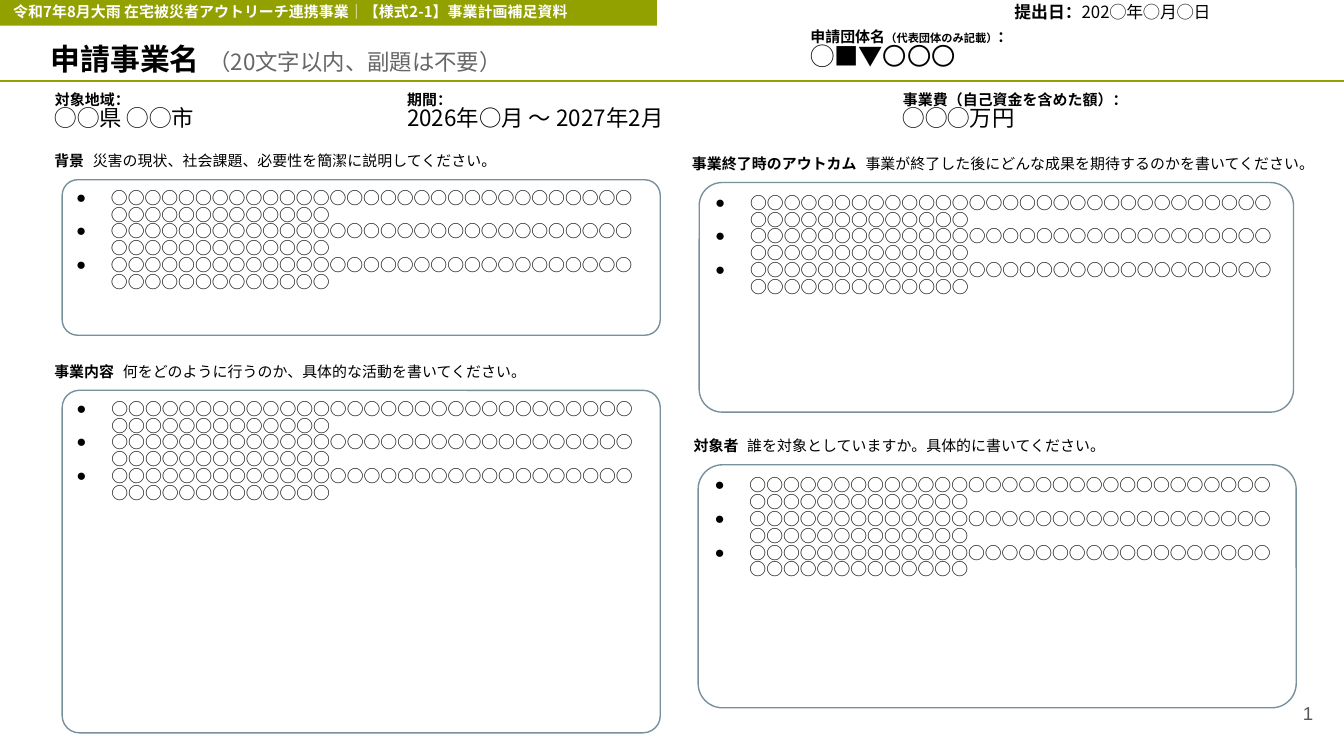
"""Build the one-page project plan form slide."""
from dataclasses import dataclass
from typing import NamedTuple

from lxml import etree
from pptx import Presentation
from pptx.dml.color import RGBColor
from pptx.enum.shapes import MSO_CONNECTOR, MSO_SHAPE
from pptx.enum.text import MSO_ANCHOR, PP_ALIGN
from pptx.oxml.ns import qn
from pptx.util import Pt

RECT, ROUND = MSO_SHAPE.RECTANGLE, MSO_SHAPE.ROUNDED_RECTANGLE
STRAIGHT = MSO_CONNECTOR.STRAIGHT
MIDDLE, TOP = MSO_ANCHOR.MIDDLE, MSO_ANCHOR.TOP
LEFT, RIGHT = PP_ALIGN.LEFT, PP_ALIGN.RIGHT


@dataclass(frozen=True)
class Theme:
    """Colours, fonts, type sizes and line spacings."""
    green: str = "92A000"
    outline: str = "78909C"
    black: str = "000000"
    white: str = "FFFFFF"
    hint: str = "666666"
    number: str = "595959"
    font: str = "Noto Sans CJK JP"
    number_font: str = "Arial"
    note: float = 6
    label: float = 8
    body: float = 9
    page: float = 10
    value: float = 12
    group: float = 13
    title: float = 16
    title_gap: float = 20
    tight: float = 0.83
    single: float = 0.92


T = Theme()


class Box(NamedTuple):
    """Position and size in points."""
    x: float
    y: float
    w: float
    h: float


class Span(NamedTuple):
    """A stretch of text in one style."""
    text: str
    size: float
    bold: bool = False
    color: str = T.black
    font: str = T.font


class Field(NamedTuple):
    """A bold label above its value."""
    box: Box
    label: list[Span]
    value: Span


class Section(NamedTuple):
    """A heading with guidance and the bulleted panel below it."""
    heading: Box
    name: str
    guide: str
    panel: Box
    radius: float


ITEMS = ["○" * 44] * 3
FIELDS = [
    Field(Box(427, 12.2, 264, 29.5),
          [Span("申請団体名", T.label, True), Span("（代表団体のみ記載）", T.note, True),
           Span("：", T.label, True)], Span("◯■▼〇〇〇", T.group)),
    Field(Box(22.3, 45.4, 178, 29.5), [Span("対象地域：", T.label, True)],
          Span("◯◯県 ◯◯市", T.value)),
    Field(Box(211, 45.4, 248, 29.5), [Span("期間：", T.label, True)],
          Span("2026年○月 〜 2027年2月", T.value)),
    Field(Box(476.6, 45.4, 215, 29.5), [Span("事業費（自己資金を含めた額）：", T.label, True)],
          Span("◯◯◯万円", T.value)),
]
SECTIONS = [
    Section(Box(22, 76.3, 287, 18), "背景", "災害の現状、社会課題、必要性を簡潔に説明してください。",
            Box(33.3, 96.3, 320.4, 83.3), 0.1),
    Section(Box(363.6, 77.8, 358, 18), "事業終了時のアウトカム",
            "事業が終了した後にどんな成果を期待するのかを書いてください。",
            Box(374.6, 97.8, 318.4, 123), 0.1),
    Section(Box(22, 189.4, 287, 18), "事業内容", "何をどのように行うのか、具体的な活動を書いてください。",
            Box(33.3, 209.1, 320.4, 183.5), 0.05),
    Section(Box(364.6, 229, 330, 18), "対象者", "誰を対象としていますか。具体的に書いてください。",
            Box(374, 249, 320.4, 130.2), 0.1),
]


def rgb(value: str) -> RGBColor:
    """Turn a hex string into a colour."""
    return RGBColor.from_string(value)


def add_bullet(p) -> None:
    """Give a paragraph a hanging round bullet."""
    pPr = p._p.get_or_add_pPr()
    pPr.set("marL", str(Pt(19.4)))
    pPr.set("indent", str(-Pt(18.7)))
    color = etree.SubElement(pPr, qn("a:buClr"))
    etree.SubElement(color, qn("a:srgbClr"), val=T.black)
    etree.SubElement(pPr, qn("a:buFont"), typeface=T.number_font)
    etree.SubElement(pPr, qn("a:buChar"), char="●")


def write(s, lines: list[list[Span]], spacing: float, anchor=MIDDLE, align=LEFT,
          margins: tuple[float, float] = (7.2, 3.6), bullets: bool = False) -> None:
    """Fill a shape with styled paragraphs."""
    tf = s.text_frame
    tf.word_wrap = True
    tf.vertical_anchor = anchor
    tf.margin_left = tf.margin_right = Pt(margins[0])
    tf.margin_top = tf.margin_bottom = Pt(margins[1])
    for i, spans in enumerate(lines):
        p = tf.add_paragraph() if i else tf.paragraphs[0]
        p.alignment = align
        p.line_spacing = spacing
        if bullets:
            add_bullet(p)
        for span in spans:
            r = p.add_run()
            r.text = span.text
            r.font.size = Pt(span.size)
            r.font.bold = span.bold
            r.font.color.rgb = rgb(span.color)
            r.font.name = span.font
            etree.SubElement(r._r.get_or_add_rPr(), qn("a:ea"), typeface=span.font)


def add_text(shapes, box: Box, lines: list[list[Span]], spacing: float = T.single, **layout) -> None:
    """Add a text box."""
    write(shapes.add_textbox(*map(Pt, box)), lines, spacing, **layout)


def add_banner(shapes, box: Box, text: str) -> None:
    """Add the filled strip at the top."""
    s = shapes.add_shape(RECT, *map(Pt, box))
    s.shadow.inherit = False
    s.fill.solid()
    s.fill.fore_color.rgb = rgb(T.green)
    s.line.fill.background()
    write(s, [[Span(text, T.label, True, T.white)]], T.single, margins=(7.2, 7.2))


def add_rule(shapes, y: float, width: float) -> None:
    """Add the line under the title."""
    s = shapes.add_connector(STRAIGHT, 0, Pt(y), Pt(width), Pt(y))
    s.line.color.rgb = rgb(T.green)
    s.line.width = Pt(1.5)
    etree.SubElement(s._element.spPr, qn("a:effectLst"))


def add_section(shapes, section: Section) -> None:
    """Add a heading and its outlined panel."""
    s = shapes.add_shape(ROUND, *map(Pt, section.panel))
    s.adjustments[0] = section.radius
    s.shadow.inherit = False
    s.fill.background()
    s.line.color.rgb = rgb(T.outline)
    s.line.width = Pt(0.75)
    write(s, [[Span(item, T.body)] for item in ITEMS], T.tight, anchor=TOP,
          margins=(4.3, 3.6), bullets=True)
    add_text(shapes, section.heading, [[
        Span(section.name, T.label, True), Span(" ", T.value, True),
        Span(" ", T.label, True), Span(section.guide, T.label)]])


def main() -> None:
    """Build and save the slide."""
    prs = Presentation()
    prs.slide_width, prs.slide_height = Pt(720), Pt(405)
    shapes = prs.slides.add_slide(prs.slide_layouts[6]).shapes
    add_rule(shapes, 43.4, 720)
    add_banner(shapes, Box(0, 0, 352, 13.7),
               "令和7年8月大雨 在宅被災者アウトリーチ連携事業｜【様式2-1】事業計画補足資料")
    add_text(shapes, Box(20.2, 19.4, 407, 23.8), [[
        Span("申請事業名", T.title, True), Span(" ", T.title_gap, True),
        Span("（20文字以内、副題は不要）", T.value, color=T.hint)]])
    add_text(shapes, Box(536.4, 0, 155.5, 13.7), [[
        Span("提出日：", T.body, True), Span("202◯年◯月◯日", T.body)]])
    for field in FIELDS:
        add_text(shapes, field.box, [field.label, [field.value]], T.tight)
    for section in SECTIONS:
        add_section(shapes, section)
    add_text(shapes, Box(667.4, 367.2, 43.2, 31), [[
        Span("1", T.page, color=T.number, font=T.number_font)]],
        align=RIGHT, margins=(7.2, 7.2))
    prs.save("out.pptx")


if __name__ == "__main__":
    main()
